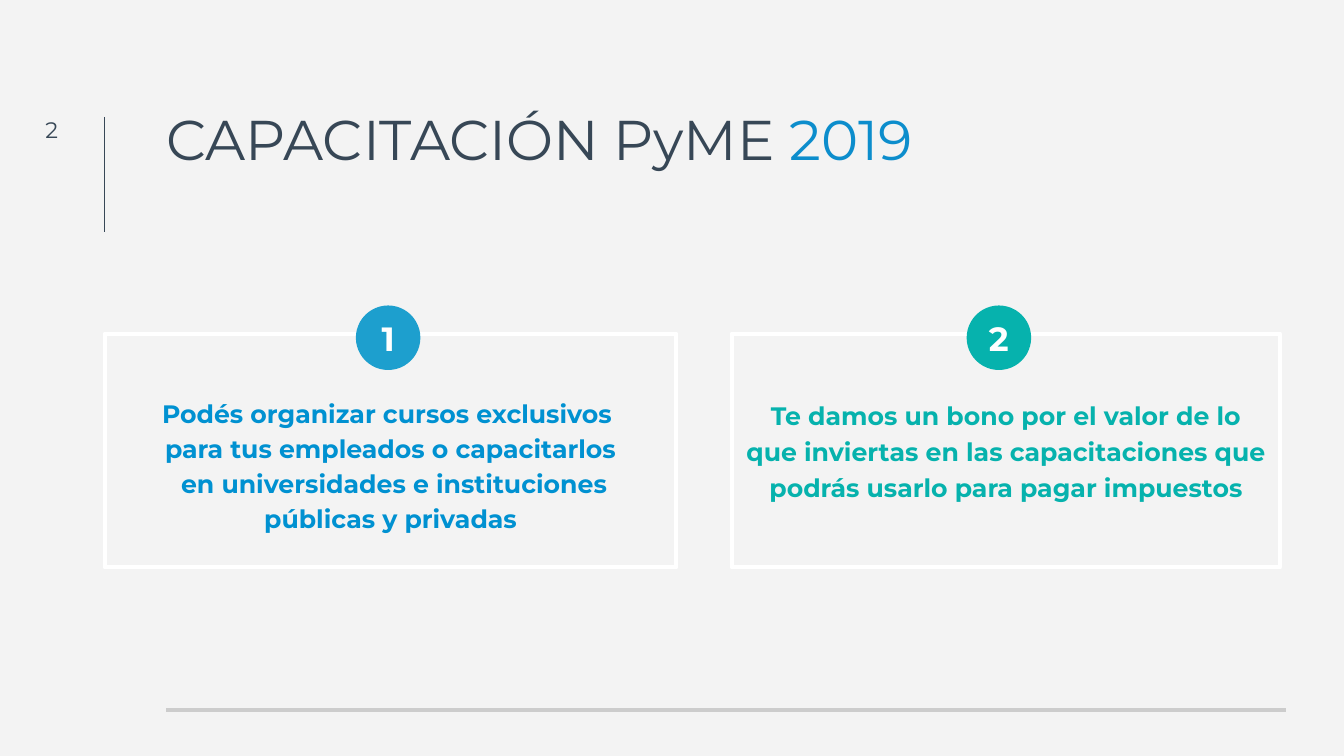
"""Build the slide that presents the two benefits of the 2019 training plan."""
from dataclasses import dataclass

from lxml import etree
from pptx import Presentation
from pptx import util as u
from pptx.dml.color import RGBColor
from pptx.enum import shapes, text
from pptx.oxml import ns

FONT = "Montserrat"
PAPER = RGBColor(0xF3, 0xF3, 0xF3)
WHITE = RGBColor(0xFF, 0xFF, 0xFF)
GREY = RGBColor(0xCC, 0xCC, 0xCC)
SLATE = RGBColor(0x37, 0x47, 0x56)
AZURE = RGBColor(0x0C, 0x8D, 0xCC)
BLUE = RGBColor(0x00, 0x91, 0xD1)
SKY = RGBColor(0x1D, 0x9F, 0xCE)
TEAL = RGBColor(0x06, 0xB2, 0xAD)

CARD_TOP, CARD_TALL = 238.3, 167
DISC_TOP, DISC_SIZE = 218.2, 46.1
LEFT, CENTER = text.PP_ALIGN.LEFT, text.PP_ALIGN.CENTER
TOP, MIDDLE = text.MSO_ANCHOR.TOP, text.MSO_ANCHOR.MIDDLE


@dataclass
class Card:
    left: float
    width: float
    side: float
    disc_left: float
    disc_fill: RGBColor
    ink: RGBColor
    leading: float
    lines: list[str]


@dataclass
class Rule:
    start: tuple[float, float]
    end: tuple[float, float]
    color: RGBColor
    weight: float


CARDS = [
    Card(74.9, 408.2, 13.7, 254.2, SKY, BLUE, 1.15,
         ["Podés organizar cursos exclusivos ",
          "para tus empleados o capacitarlos",
          " en universidades e instituciones públicas y privadas"]),
    Card(522.7, 391.7, 9.4, 690.5, TEAL, TEAL, 1.2,
         ["Te damos un bono por el valor de lo que inviertas en las "
          "capacitaciones que podrás usarlo para pagar impuestos"]),
]
RULES = [
    Rule((118.8, 506.9), (918.7, 506.9), GREY, 3),
    Rule((74.9, 83.5), (74.9, 165.6), SLATE, 0.75),
]


def set_frame(frame, anchor, side: float, top: float, low: float) -> None:
    frame.word_wrap = True
    frame.auto_size = text.MSO_AUTO_SIZE.NONE
    frame.vertical_anchor = anchor
    frame.margin_left = frame.margin_right = u.Pt(side)
    frame.margin_top, frame.margin_bottom = u.Pt(top), u.Pt(low)


def add_run(para, words: str, size: float, color: RGBColor,
            bold: bool = False) -> None:
    run = para.add_run()
    run.text = words
    run.font.name, run.font.size, run.font.bold = FONT, u.Pt(size), bold
    run.font.color.rgb = color


def draw_rule(slide, rule: Rule) -> None:
    line = slide.shapes.add_connector(
        shapes.MSO_CONNECTOR.STRAIGHT, *map(u.Pt, rule.start + rule.end))
    line.line.color.rgb = rule.color
    line.line.width = u.Pt(rule.weight)
    etree.SubElement(line.element.spPr, ns.qn("a:effectLst"))


def draw_card(slide, card: Card, number: int) -> None:
    box = slide.shapes.add_shape(
        shapes.MSO_SHAPE.RECTANGLE,
        *map(u.Pt, (card.left, CARD_TOP, card.width, CARD_TALL)))
    box.shadow.inherit = False
    box.fill.background()
    box.line.color.rgb, box.line.width = WHITE, u.Pt(3)
    frame = box.text_frame
    set_frame(frame, TOP, card.side, 43.2, 9.4)
    for index, words in enumerate(card.lines):
        para = frame.add_paragraph() if index else frame.paragraphs[0]
        para.alignment, para.line_spacing = CENTER, card.leading
        add_run(para, words, 18, card.ink, True)

    disc = slide.shapes.add_shape(
        shapes.MSO_SHAPE.OVAL,
        *map(u.Pt, (card.disc_left, DISC_TOP, DISC_SIZE, DISC_SIZE)))
    disc.shadow.inherit = False
    disc.fill.solid()
    disc.fill.fore_color.rgb = card.disc_fill
    disc.line.fill.background()
    set_frame(disc.text_frame, MIDDLE, 0, 0, 0)
    para = disc.text_frame.paragraphs[0]
    para.alignment = CENTER
    add_run(para, str(number), 24, WHITE, True)


def draw_title(slide) -> None:
    title = slide.shapes.title
    title.left, title.top = u.Pt(114.5), u.Pt(70.6)
    title.width, title.height = u.Pt(626.4), u.Pt(95)
    set_frame(title.text_frame, TOP, 4.3, 4.3, 4.3)
    para = title.text_frame.paragraphs[0]
    para.alignment = LEFT
    add_run(para, "CAPACITACIÓN PyME ", 40, SLATE)
    add_run(para, "2019", 40, AZURE)


def draw_page(slide) -> None:
    page = slide.shapes.add_textbox(*map(u.Pt, (23, 83.5, 47.5, 18.7)))
    set_frame(page.text_frame, MIDDLE, 9.4, 9.4, 9.4)
    add_run(page.text_frame.paragraphs[0], "2", 16, SLATE)


def main() -> None:
    deck = Presentation()
    deck.slide_width, deck.slide_height = u.Pt(960), u.Pt(540)
    slide = deck.slides.add_slide(deck.slide_layouts.get_by_name("Title Only"))
    slide.background.fill.solid()
    slide.background.fill.fore_color.rgb = PAPER
    draw_title(slide)
    draw_page(slide)
    for rule in RULES:
        draw_rule(slide, rule)
    for number, card in enumerate(CARDS, 1):
        draw_card(slide, card, number)
    deck.save("out.pptx")


if __name__ == "__main__":
    main()
